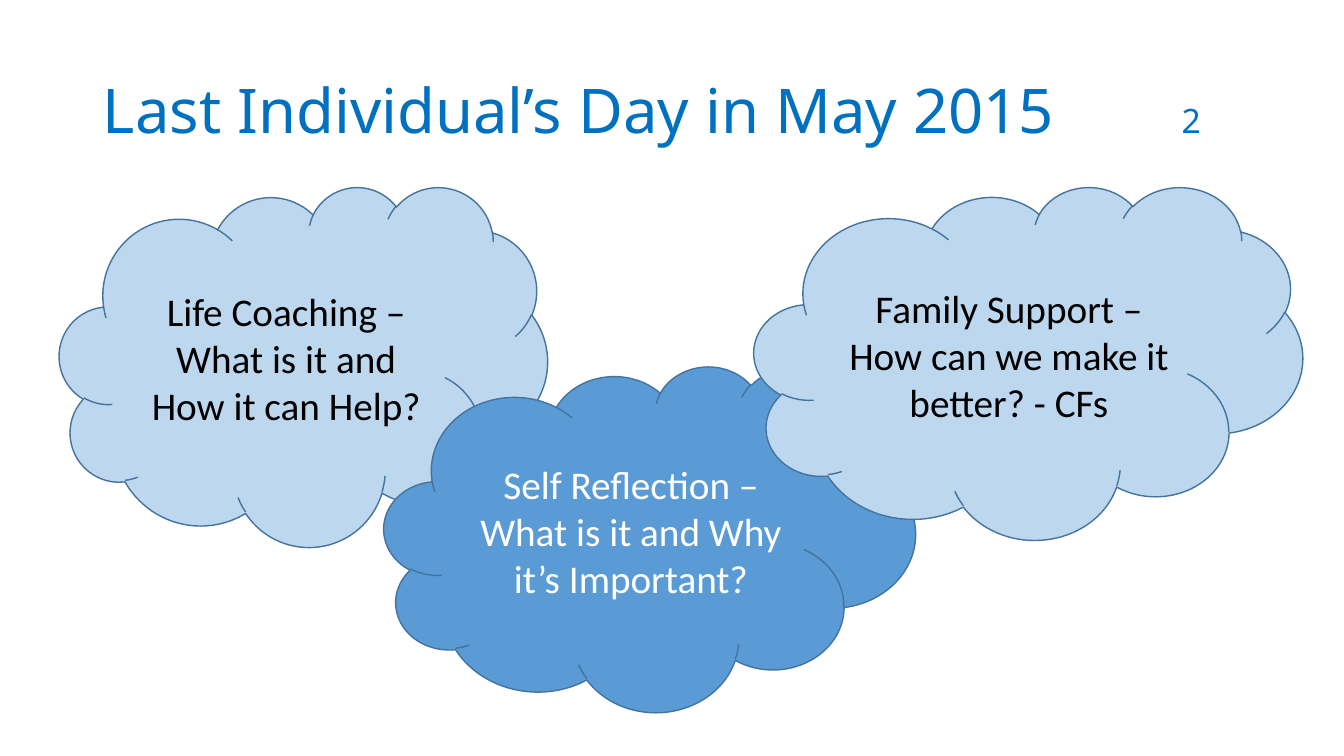
"""Build the slide on the topics of the last Individual's Day."""
from dataclasses import dataclass

from lxml import etree
from pptx import Presentation
from pptx.dml.color import RGBColor
from pptx.enum.shapes import MSO_SHAPE
from pptx.enum.text import MSO_ANCHOR, MSO_AUTO_SIZE, PP_ALIGN
from pptx.oxml.ns import qn
from pptx.util import Inches, Pt

CLOUD = MSO_SHAPE.CLOUD
MIDDLE = MSO_ANCHOR.MIDDLE
NO_AUTOFIT = MSO_AUTO_SIZE.NONE
LEFT, CENTER = PP_ALIGN.LEFT, PP_ALIGN.CENTER


@dataclass(frozen=True)
class Theme:
    title_font: str = "Noto Sans"
    body_font: str = "Calibri"
    title_color: RGBColor = RGBColor.from_string("0070C0")
    pale: RGBColor = RGBColor.from_string("BDD7EE")
    strong: RGBColor = RGBColor.from_string("5B9BD5")
    outline: RGBColor = RGBColor.from_string("43739E")
    dark_text: RGBColor = RGBColor.from_string("000000")
    light_text: RGBColor = RGBColor.from_string("FFFFFF")
    title_size: Pt = Pt(44)
    number_size: Pt = Pt(24)
    body_size: Pt = Pt(28)


theme = Theme()


def style_run(run, font_name, size, color):
    run.font.name = font_name
    run.font.size = size
    run.font.color.rgb = color


presentation = Presentation()
presentation.slide_width = Inches(13.33)
presentation.slide_height = Inches(7.5)
slide = presentation.slides.add_slide(presentation.slide_layouts[5])

title = slide.shapes.title
title.left, title.top = Inches(0.92), Inches(0.4)
title.width, title.height = Inches(11.5), Inches(1.45)
title.text_frame.auto_size = NO_AUTOFIT
title.text_frame.vertical_anchor = MIDDLE
paragraph = title.text_frame.paragraphs[0]
paragraph.alignment = LEFT
paragraph.line_spacing = 0.9
tab_list = etree.SubElement(paragraph._p.get_or_add_pPr(), qn("a:tabLst"))
etree.SubElement(tab_list, qn("a:tab"), pos=str(Inches(10.7)), algn="l")
for text, size in [
    ("Last Individual’s Day in May 2015", theme.title_size),
    ("\t2", theme.number_size),
]:
    run = paragraph.add_run()
    run.text = text
    style_run(run, theme.title_font, size, theme.title_color)

topics = [
    ("Life Coaching – What is it and How it can Help?",
     (0.59, 1.85, 4.84, 3.57), theme.pale, theme.dark_text),
    ("Self Reflection – What is it and Why it’s Important?",
     (3.81, 3.63, 5.27, 3.43), theme.strong, theme.light_text),
    ("Family Support – How can we make it better? - CFs",
     (7.48, 1.85, 5.44, 3.5), theme.pale, theme.dark_text),
]
for text, box, fill_color, text_color in topics:
    cloud = slide.shapes.add_shape(CLOUD, *map(Inches, box))
    cloud.shadow.inherit = False
    cloud.fill.solid()
    cloud.fill.fore_color.rgb = fill_color
    cloud.line.color.rgb = theme.outline
    cloud.line.width = Pt(1)
    cloud.text_frame.word_wrap = True
    cloud.text_frame.vertical_anchor = MIDDLE
    cloud.text_frame.text = text
    paragraph = cloud.text_frame.paragraphs[0]
    paragraph.alignment = CENTER
    style_run(paragraph.runs[0], theme.body_font, theme.body_size, text_color)

presentation.save("out.pptx")
